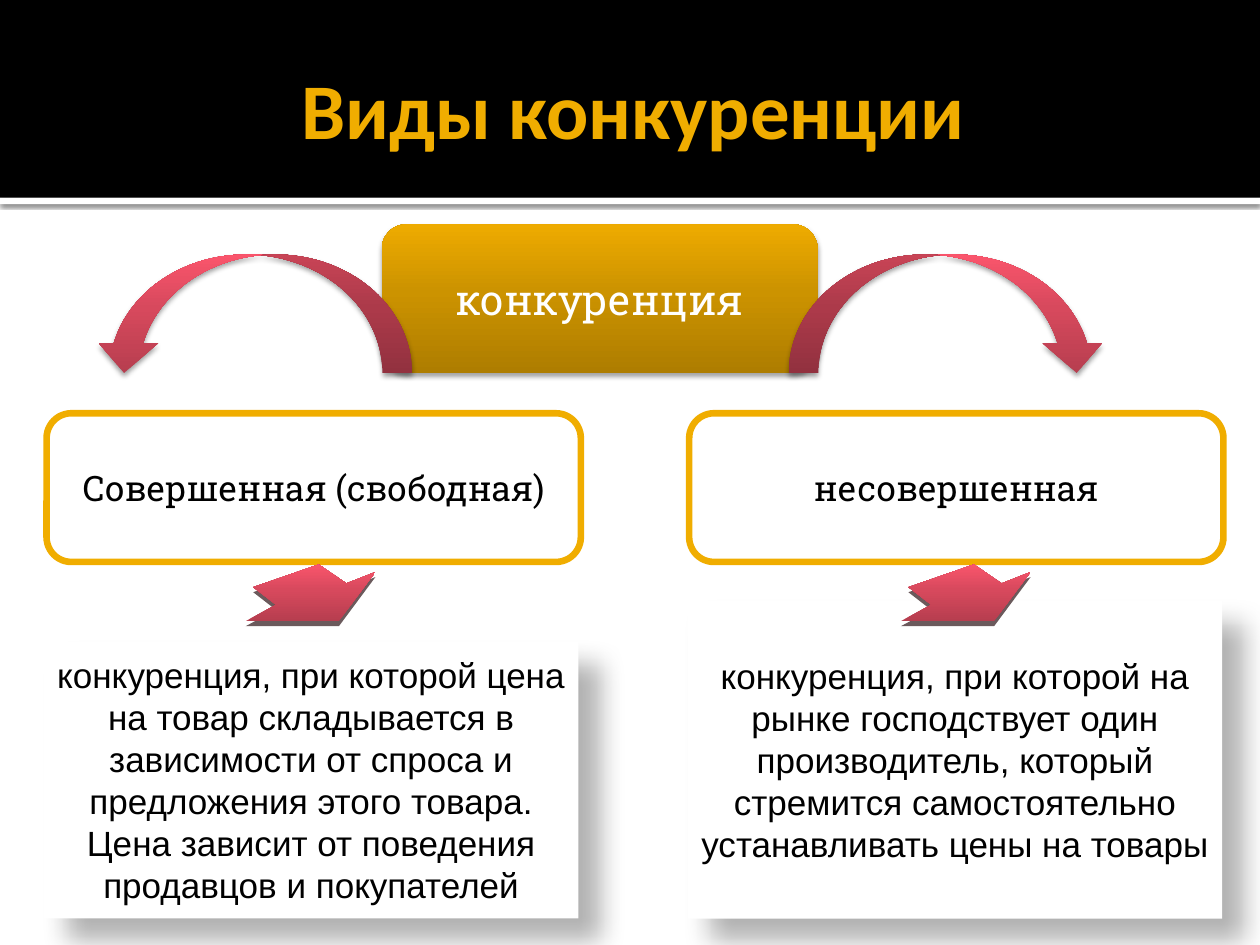
from copy import deepcopy
from lxml import etree
from pptx import Presentation
from pptx import util as u
from pptx.dml.color import RGBColor
from pptx.enum import shapes, text
from pptx.oxml import ns

Inches, Pt = u.Inches, u.Pt
kinds = shapes.MSO_SHAPE
color = RGBColor.from_string

GOLD = "F0AD00"
GOLD_STOPS = [(0, "AE7D00"), (0.55, "CC9300"), (1, "EEAB00")]
RED_STOPS = [(0, "B73E4F"), (0.55, "D7495D"), (1, "FA556C")]
RAISED = ("000000", 38, 3.1, 2, 90)
FLOATING = ("000000", 30, 15, 18, 45)


def style(shape, fill, shadow=None):
    shape.line.fill.background()
    if isinstance(fill, str):
        shape.fill.solid()
        shape.fill.fore_color.rgb = color(fill)
    else:
        shape.fill.gradient()
        shape.fill.gradient_angle = 90
        stop_list = shape._element.spPr.find(".//" + ns.qn("a:gsLst"))
        stop_list.append(deepcopy(stop_list[0]))
        for stop, (position, value) in zip(shape.fill.gradient_stops, fill):
            stop.position = position
            stop.color.rgb = color(value)
    shape.shadow.inherit = False
    if shadow:
        value, opacity, blur, distance, angle = shadow
        effects = shape._element.spPr.find(ns.qn("a:effectLst"))
        outer = etree.SubElement(effects, ns.qn("a:outerShdw"), blurRad=str(Pt(blur)),
                                 dist=str(Pt(distance)), dir=str(angle * 60000),
                                 algn="tl", rotWithShape="0")
        tone = etree.SubElement(outer, ns.qn("a:srgbClr"), val=value)
        etree.SubElement(tone, ns.qn("a:alpha"), val=str(opacity * 1000))


def write(shape, words, size, font, value, bold=False):
    frame = shape.text_frame
    frame.word_wrap = True
    frame.vertical_anchor = text.MSO_ANCHOR.MIDDLE
    frame.text = words
    paragraph = frame.paragraphs[0]
    paragraph.alignment = text.PP_ALIGN.CENTER
    paragraph.font.size = Pt(size)
    paragraph.font.name = font
    paragraph.font.bold = bold
    paragraph.font.color.rgb = color(value)


presentation = Presentation()
presentation.slide_width, presentation.slide_height = Inches(10), Inches(7.5)
slide = presentation.slides.add_slide(presentation.slide_layouts[5])

stripe = slide.shapes.add_shape(kinds.RECTANGLE, 0, Inches(1.57), Inches(10), Inches(0.05))
style(stripe, "FFFFFF", ("000000", 60, 2.5, 0.8, 90))
band = slide.shapes.add_shape(kinds.RECTANGLE, 0, 0, Inches(10), Inches(1.57))
style(band, "000000")

title = slide.shapes.title
title.left, title.top = Inches(0.5), Inches(0.17)
title.width, title.height = Inches(9), Inches(1.37)
write(title, "Виды конкуренции", 45, "Calibri", GOLD, bold=True)
title.text_frame.margin_right = Inches(0.05)
slide.shapes._spTree.append(title._element)

root = slide.shapes.add_shape(kinds.ROUNDED_RECTANGLE, Inches(3.03), Inches(1.78),
                              Inches(3.46), Inches(1.18))
style(root, GOLD_STOPS, RAISED)
write(root, "конкуренция", 24, "Roboto Slab", "FFFFFF")

for left, words in [(0.37, "Совершенная (свободная)"), (5.47, "несовершенная")]:
    kind_box = slide.shapes.add_shape(kinds.ROUNDED_RECTANGLE, Inches(left), Inches(3.28),
                                      Inches(4.24), Inches(1.18))
    style(kind_box, "FFFFFF")
    kind_box.line.color.rgb = color(GOLD)
    kind_box.line.width = Pt(3.78)
    write(kind_box, words, 20, "Roboto Slab", "000000")

for left, flipped in [(6.26, False), (0.75, True)]:
    branch = slide.shapes.add_shape(kinds.CURVED_DOWN_ARROW, Inches(left), Inches(2.02),
                                    Inches(2.52), Inches(0.94))
    style(branch, RED_STOPS, RAISED)
    if flipped:
        branch._element.spPr.find(ns.qn("a:xfrm")).set("flipH", "1")

definitions = [
    (0.35, 5.09, "конкуренция, при которой цена на товар складывается в зависимости от спроса "
                 "и предложения этого товара. Цена зависит от поведения продавцов и покупателей"),
    (5.46, 4.77, "конкуренция, при которой на рынке господствует один производитель, который "
                 "стремится самостоятельно устанавливать цены на товары"),
]
for left, top, words in definitions:
    definition = slide.shapes.add_shape(kinds.RECTANGLE, Inches(left), Inches(top),
                                        Inches(4.24), Inches(7.29 - top))
    style(definition, "FFFFFF", FLOATING)
    write(definition, words, 20, "Arial", "000000")

tilted_arrow = [(0.06, 0.18), (0.58, 0), (0.8, 0.15), (1.03, 0.06),
                (0.74, 0.45), (0, 0.45), (0.24, 0.32)]
for left in (1.95, 7.15):
    for drop, fill in [(0.04, "6B5A5C"), (0, RED_STOPS)]:
        points = [(Inches(left + x), Inches(4.48 + drop + y)) for x, y in tilted_arrow]
        builder = slide.shapes.build_freeform(*points[0])
        builder.add_line_segments(points[1:])
        style(builder.convert_to_shape(), fill)

presentation.save("out.pptx")
